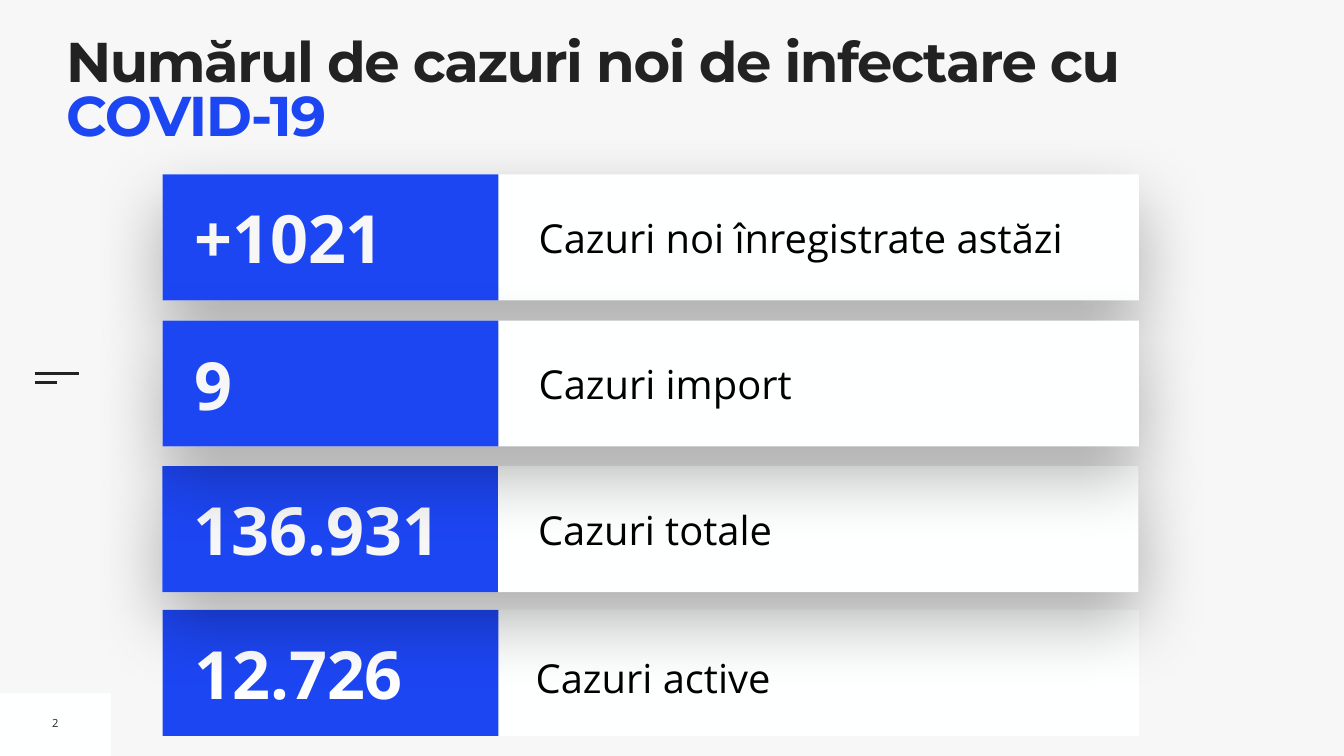
from lxml import etree
from pptx import Presentation, util as u
from pptx.dml.color import RGBColor
from pptx.enum import shapes, text
from pptx.oxml.ns import qn

# Content
TITLE = ["Numărul de cazuri noi de infectare cu ", "COVID-19"]
PAGE = "2"
# Rows from back to front: left, top, number, label, number colour, shadow
ROWS = [
    (3.23, 12.1, "12.726", "Cazuri active", "FFFFFF", False),
    (3.22, 9.25, "136.931", "Cazuri totale", "F7F7F7", True),
    (3.23, 3.46, "+1021", "Cazuri noi înregistrate astăzi", "F7F7F7", True),
    (3.23, 6.36, "9", "Cazuri import", "F7F7F7", True),
]
WIDE, HIGH = 26.67, 15
BAR_W, BAR_H, KEY_W = 19.37, 2.5, 6.66
BLUE, WHITE, DARK, BLACK, PALE = "1D46F3", "FEFFFF", "222222", "000000", "F7F7F7"


def tint(hue):
    return RGBColor.from_string(hue)


def inch(*vals):
    return [u.Inches(v) for v in vals]


def style(run, size, hue, font="Open Sans", bold=False):
    run.font.size, run.font.name, run.font.bold = u.Pt(size), font, bold
    run.font.color.rgb = tint(hue)


def box(home, at, hue):
    rect = home.add_shape(shapes.MSO_SHAPE.RECTANGLE, *inch(*at))
    rect.shadow.inherit = False
    rect.fill.solid()
    rect.fill.fore_color.rgb = tint(hue)
    rect.line.fill.background()
    return rect


def shade(rect):
    """Soft black shadow, straight down."""
    glow = rect._element.spPr.find(qn("a:effectLst"))
    outer = etree.SubElement(glow, qn("a:outerShdw"), blurRad=str(u.Pt(100)),
                             dist=str(u.Pt(40)), dir="5400000", rotWithShape="0")
    color = etree.SubElement(outer, qn("a:srgbClr"), val=BLACK)
    etree.SubElement(color, qn("a:alpha"), val="30000")


def write(home, at, words, size, hue, bold=False, inset=0.1, wrap=True):
    frame = home.add_textbox(*inch(*at)).text_frame
    frame.word_wrap = wrap
    frame.vertical_anchor = text.MSO_ANCHOR.MIDDLE
    frame.margin_left = frame.margin_right = u.Inches(inset)
    frame.margin_top = frame.margin_bottom = u.Inches(inset)
    frame.text = words
    para = frame.paragraphs[0]
    style(para.runs[0], size, hue, bold=bold)
    return para


deck = Presentation()
deck.slide_width, deck.slide_height = inch(WIDE, HIGH)
slide = deck.slides.add_slide(deck.slide_layouts[5])
slide.background.fill.solid()
slide.background.fill.fore_color.rgb = tint(PALE)

# Page number and side mark
box(slide.shapes, (0, 13.76, 2.2, 1.24), WHITE)
for y, end in ((7.41, 1.57), (7.59, 1.13)):
    line = slide.shapes.add_connector(shapes.MSO_CONNECTOR.STRAIGHT, *inch(0.69, y, end, y))
    line.line.color.rgb = tint(DARK)
    line.line.width = u.Pt(3)
    etree.SubElement(line._element.spPr, qn("a:effectLst"))
num = write(slide.shapes, (0.93, 14.09, 0.34, 0.51), PAGE, 16, DARK, wrap=False)
num.alignment = text.PP_ALIGN.CENTER

# Title
title = slide.shapes.title
title.left, title.top, title.width, title.height = inch(1.31, 0.78, 23.94, 1.58)
frame = title.text_frame
frame.margin_left = frame.margin_right = frame.margin_top = frame.margin_bottom = 0
frame.vertical_anchor = text.MSO_ANCHOR.TOP
frame.word_wrap, frame.auto_size = True, text.MSO_AUTO_SIZE.NONE
para = frame.paragraphs[0]
para.alignment, para.line_spacing = text.PP_ALIGN.LEFT, 0.8
for words, hue in zip(TITLE, (DARK, BLUE)):
    run = para.add_run()
    run.text = words
    style(run, 80, hue, "Montserrat", True)
    run.font._element.set("spc", "-200")

# Rows: white bar, label, blue key, number
for x, y, number, label, hue, lifted in ROWS:
    row = slide.shapes.add_group_shape().shapes
    bar = box(row, (x, y, BAR_W, BAR_H), WHITE)
    if lifted:
        shade(bar)
        write(row, (x + 7.36, y + 0.67, 11.76, 1.16), label, 57, BLACK)
    else:
        para = write(row, (x + 7.4, y + 0.58, 11.58, 1.25), label, 57, BLACK, inset=0)
        para.line_spacing, para.space_before = 1.3, u.Pt(20)
    box(row, (x, y, KEY_W, BAR_H), BLUE)
    write(row, (x + 0.53, y + 0.35, 6.03, 1.8), number, 95, hue, bold=True)

deck.save("out.pptx")
